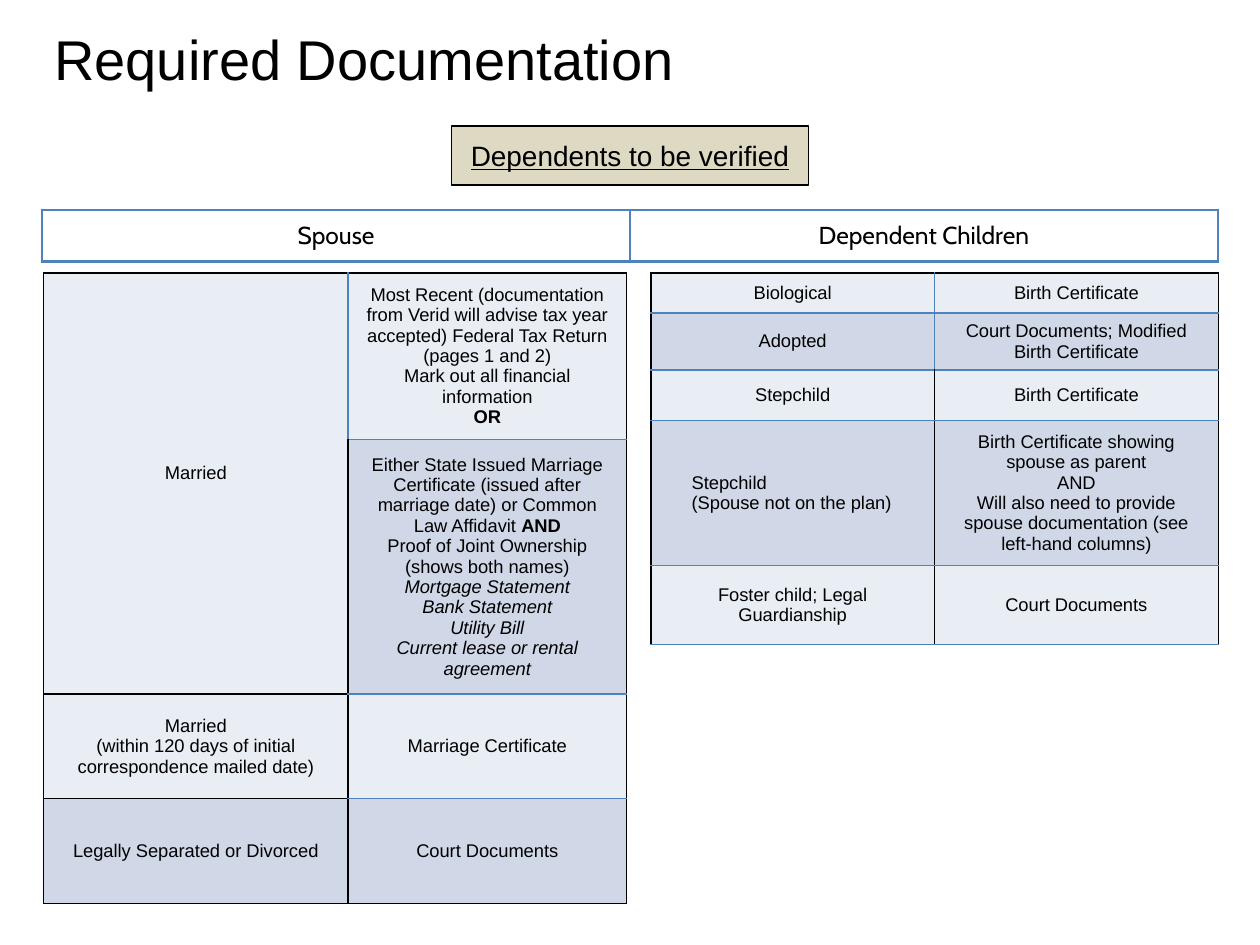
from lxml.etree import SubElement
from pptx import Presentation
from pptx.dml.color import RGBColor
from pptx.enum.shapes import MSO_SHAPE as Shape
from pptx.enum.text import MSO_ANCHOR as Anchor, PP_ALIGN as Align
from pptx.oxml.ns import qn
from pptx.util import Cm, Pt

BLACK, BLUE = "000000", "4F81BD"
BANDS = ["E9EDF4", "D0D8E8"]


def style(paragraph, size, font="Arial", align=Align.CENTER):
    paragraph.alignment = align
    paragraph.font.size = Pt(size)
    paragraph.font.name = font
    paragraph.font.color.rgb = RGBColor.from_string(BLACK)


def border(cell, edges, bottom_width=1):
    """Edges are K (black) or B (blue), in the order left, right, top, bottom."""
    props = cell._tc.get_or_add_tcPr()
    for side, edge in zip("LRTB", edges):
        width = bottom_width if side == "B" else 1
        line = SubElement(props, qn(f"a:ln{side}"), w=str(Pt(width)))
        fill = SubElement(line, qn("a:solidFill"))
        SubElement(fill, qn("a:srgbClr"), val=BLACK if edge == "K" else BLUE)


prs = Presentation()
prs.slide_width, prs.slide_height = Cm(25.4), Cm(19.05)
slide = prs.slides.add_slide(prs.slide_layouts[5])

# Title
title = slide.shapes.title
title.left, title.top, title.width, title.height = Cm(0.84), Cm(-0.42), Cm(23.72), Cm(3.18)
title.text_frame.text = "Required Documentation"
title.text_frame.vertical_anchor = Anchor.MIDDLE
style(title.text_frame.paragraphs[0], 32, align=Align.LEFT)

# Heading box
heading = slide.shapes.add_shape(Shape.RECTANGLE, Cm(9.1), Cm(2.54), Cm(7.2), Cm(1.19))
heading.shadow.inherit = False
heading.fill.solid()
heading.fill.fore_color.rgb = RGBColor.from_string("DDD9C3")
heading.line.color.rgb = RGBColor.from_string(BLACK)
heading.line.width = Pt(0.75)
frame = heading.text_frame
frame.margin_left = frame.margin_right = frame.margin_top = frame.margin_bottom = Cm(0.25)
frame.vertical_anchor = Anchor.TOP
frame.text = "Dependents to be verified"
style(frame.paragraphs[0], 16)
frame.paragraphs[0].font.underline = True

# Column headings
headings = slide.shapes.add_table(1, 2, Cm(0.85), Cm(4.23), Cm(23.7), Cm(1.04)).table
headings.first_row = headings.horz_banding = False
for cell, text in zip(headings.rows[0].cells, ["Spouse", "Dependent Children"]):
    border(cell, "BBBB", bottom_width=2)
    cell.fill.background()
    cell.vertical_anchor = Anchor.MIDDLE
    cell.text = text
    style(cell.text_frame.paragraphs[0], 14, "Cabin")

# Rows: height, then text and edges of each cell; ** marks bold, a leading _ italic
spouse_rows = [
    (3.36, (["Married"], "KBKK"),
     (["Most Recent (documentation from Verid will advise tax year accepted) Federal Tax Return",
       "(pages 1 and 2)", "Mark out all financial information", "**OR**"], "BKKB")),
    (5.13, ([], "KKKK"),
     (["Either State Issued Marriage Certificate (issued after marriage date) "
       "or Common Law Affidavit **AND**",
       "Proof of Joint Ownership", "(shows both names)", "_Mortgage Statement",
       "_Bank Statement", "_Utility Bill", "_Current lease or rental agreement"], "KKBB")),
    (2.11, (["Married", "(within 120 days of initial correspondence mailed date)"], "KKKK"),
     (["Marriage Certificate"], "KKBB")),
    (2.11, (["Legally Separated or Divorced"], "KKKK"), (["Court Documents"], "KKBK")),
]
children_rows = [
    (0.81, (["Biological"], "KBKB"), (["Birth Certificate"], "BKKB")),
    (1.15, (["Adopted"], "KBBB"),
     (["Court Documents; Modified Birth Certificate"], "BKBB")),
    (1.02, (["Stepchild"], "KKBB"), (["Birth Certificate"], "KKBB")),
    (2.92, (["Stepchild", "(Spouse not on the plan)"], "KKBB"),
     (["Birth Certificate showing spouse as parent", "AND",
       "Will also need to provide spouse documentation (see left-hand columns)"], "KKBB")),
    (1.59, (["Foster child; Legal Guardianship"], "KKBB"), (["Court Documents"], "KKBB")),
]

# Spouse and children tables
tables = []
for left, widths, rows in [(0.88, [6.14, 5.61], spouse_rows),
                           (13.12, [5.72, 5.72], children_rows)]:
    height = sum(row[0] for row in rows)
    table = slide.shapes.add_table(len(rows), 2, Cm(left), Cm(5.5),
                                   Cm(sum(widths)), Cm(height)).table
    table.first_row = table.horz_banding = False
    tables.append(table)
    for column, width in zip(table.columns, widths):
        column.width = Cm(width)
    for r, (row_height, *cells) in enumerate(rows):
        table.rows[r].height = Cm(row_height)
        for c, (lines, edges) in enumerate(cells):
            cell = table.cell(r, c)
            border(cell, edges)
            cell.fill.solid()
            cell.fill.fore_color.rgb = RGBColor.from_string(BANDS[r % 2])
            cell.vertical_anchor = Anchor.MIDDLE
            for i, line in enumerate(lines):
                frame = cell.text_frame
                paragraph = frame.add_paragraph() if i else frame.paragraphs[0]
                style(paragraph, 10.5)
                paragraph.font.italic = line.startswith("_")
                for part, text in enumerate(line.lstrip("_").split("**")):
                    if text:
                        run = paragraph.add_run()
                        run.text = text
                        if part % 2:
                            run.font.bold = True

# Married spans both document choices and sits a little above the middle
spouse, children = tables
married = spouse.cell(0, 0)
married.merge(spouse.cell(1, 0))
married.margin_bottom = Cm(0.55)

# The stepchild note is indented from the left
for paragraph in children.cell(3, 0).text_frame.paragraphs:
    paragraph.alignment = Align.LEFT
    paragraph._p.get_or_add_pPr().set("marL", str(Cm(0.57)))

prs.save("out.pptx")
